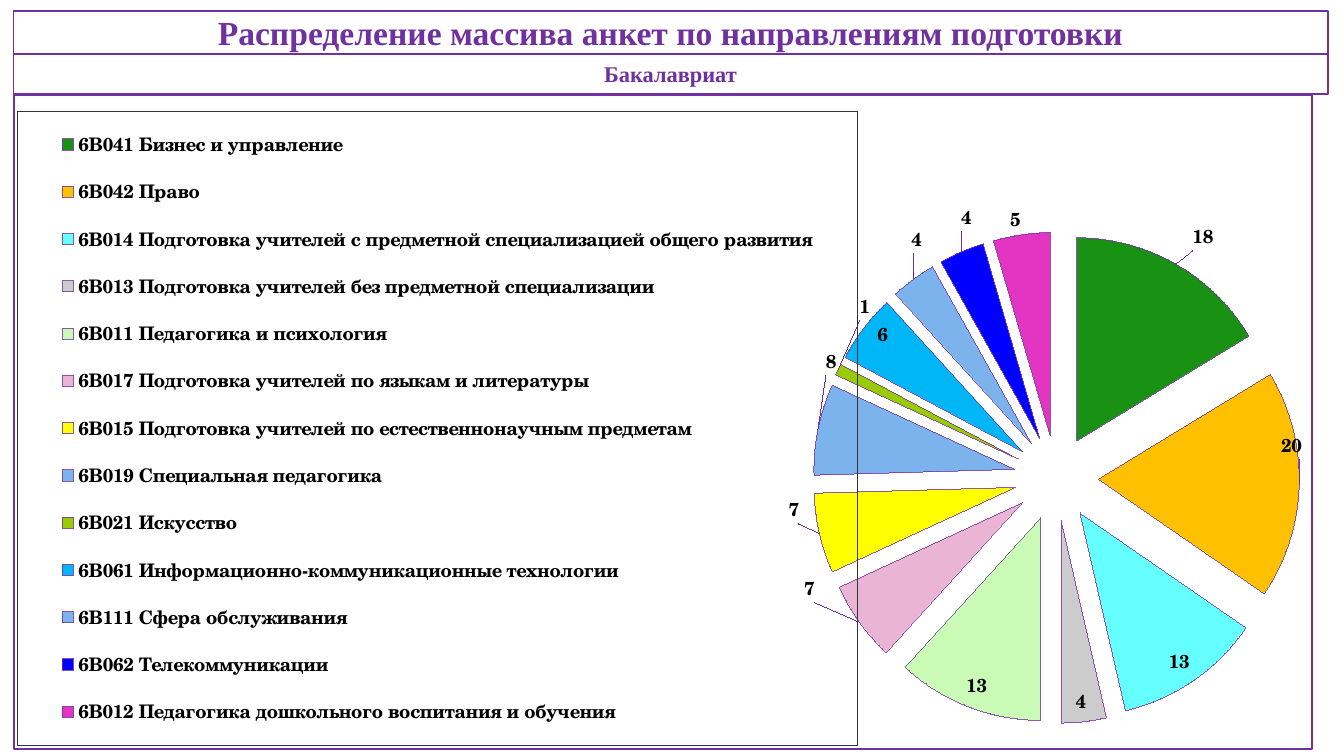
from pptx import Presentation, oxml
from pptx.chart import data as cd
from pptx.dml import color
from pptx.enum import chart as ce, text
from pptx.oxml import ns
from pptx.util import Inches, Pt

HUES = {"main": "7030A0", "back": "FFFFFF", "ink": "000000", "frame": "333333"}
HEAD, BODY = "Times New Roman", "TeX Gyre Schola"

# name, count, slice colour, shift of the label from its default place
ROWS = [
    ("6B041 Бизнес и управление", 18, "199113", (0.01, -0.01)),
    ("6B042 Право", 20, "FFC000", (-0.02, -0.06)),
    ("6В014 Подготовка учителей с предметной специализацией общего развития",
     13, "66FFFF", None),
    ("6В013 Подготовка учителей без предметной специализации",
     4, "CCCCCC", None),
    ("6В011 Педагогика и психология", 13, "C9FBB7", None),
    ("6В017 Подготовка учителей по языкам и литературы",
     7, "EAB4D4", (-0.03, -0.08)),
    ("6В015 Подготовка учителей по естественнонаучным предметам",
     7, "FFFF00", (-0.01, -0.06)),
    ("6B019 Cпециальная педагогика", 8, "7DB3EC", (0.02, -0.08)),
    ("6В021 Искусство", 1, "99CC00", (0.03, -0.07)),
    ("6B061 Информационно-коммуникационные технологии", 6, "00B6F6", None),
    ("6B111 Сфера обслуживания", 4, "7DB3EC", (0.01, -0.03)),
    ("6B062 Телекоммуникации", 4, "0000FF", (0.01, -0.02)),
    ("6В012 Педагогика дошкольного воспитания и обучения",
     5, "E335C2", (0, 0.01)),
]


def rgb(hue):
    return color.RGBColor.from_string(HUES.get(hue, hue))


def node(tag, inner="", val=None):
    attr = "" if val is None else f' val="{val}"'
    return oxml.parse_xml(
        f'<c:{tag} {ns.nsdecls("c", "a")}{attr}>{inner}</c:{tag}>')


def frame(hue, width, fill=None):
    """Chart part properties: optional fill and an outline."""
    def paint(name):
        return f'<a:solidFill><a:srgbClr val="{HUES[name]}"/></a:solidFill>'
    body = paint(fill) if fill else "<a:noFill/>"
    return node("spPr", f'{body}<a:ln w="{Pt(width)}">{paint(hue)}</a:ln>')


def place(part, index, **vals):
    """Give a chart part a manual layout."""
    for old in part.findall(ns.qn("c:layout")):
        part.remove(old)
    inner = "".join(f'<c:{k} val="{v}"/>' for k, v in vals.items())
    part.insert(index, node("layout", f"<c:manualLayout>{inner}</c:manualLayout>"))


class Deck:
    def __init__(self, wide, high):
        self.prs = Presentation()
        self.prs.slide_width, self.prs.slide_height = Inches(wide), Inches(high)
        self.slide = self.prs.slides.add_slide(self.prs.slide_layouts[0])

    def font(self, font, size, name, hue):
        style = {"size": Pt(size), "name": name, "bold": True}
        for key, val in style.items():
            setattr(font, key, val)
        font.color.rgb = rgb(hue)

    def line(self, line, width):
        line.color.rgb, line.width = rgb("main"), Pt(width)

    def band(self, index, words, box, size):
        shape = self.slide.placeholders[index]
        for key, val in zip(("left", "top", "width", "height"), box):
            setattr(shape, key, Inches(val))
        shape.fill.solid()
        shape.fill.fore_color.rgb = rgb("back")
        self.line(shape.line, 1)
        frm = shape.text_frame
        style = {"text": words, "word_wrap": True,
                 "auto_size": text.MSO_AUTO_SIZE.NONE,
                 "vertical_anchor": text.MSO_ANCHOR.MIDDLE}
        for side in ("left", "right", "top", "bottom"):
            style[f"margin_{side}"] = Inches(0.1)
        for key, val in style.items():
            setattr(frm, key, val)
        para = frm.paragraphs[0]
        para.alignment, para.space_before = text.PP_ALIGN.CENTER, Pt(0)
        self.font(para.runs[0].font, size, HEAD, "main")

    def pie(self, rows, box):
        data = cd.CategoryChartData()
        data.categories = [row[0] for row in rows]
        data.add_series("Series 1", [row[1] for row in rows])
        chart = self.slide.shapes.add_chart(
            ce.XL_CHART_TYPE.PIE, *map(Inches, box), data).chart
        chart.has_title = False
        self.font(chart.font, 10, BODY, "ink")
        root = chart._chartSpace
        root.find(ns.qn("c:txPr")).addprevious(frame("main", 1, "back"))
        place(root.chart.plotArea, 0, layoutTarget="inner", xMode="edge",
              yMode="edge", x=0.614, y=0.21, w=0.378, h=0.751)
        self.key(chart)
        chart.plots[0].vary_by_categories = True
        self.wedges(chart.plots[0].series[0], rows)

    def key(self, chart):
        chart.has_legend = True
        key = chart.legend
        key.position = ce.XL_LEGEND_POSITION.RIGHT
        key.include_in_layout = True
        self.font(key.font, 10, BODY, "ink")
        part = key._element
        place(part, 1, xMode="edge", yMode="edge",
              x=0.002, y=0.025, w=0.648, h=0.97)
        part.find(ns.qn("c:overlay")).addnext(frame("frame", 0.25))

    def wedges(self, series, rows):
        self.line(series.format.line, 0.75)
        part = series._element
        part.find(ns.qn("c:spPr")).addnext(node("explosion", val=21))
        labels = series.data_labels
        labels.show_value = True
        labels.position = ce.XL_LABEL_POSITION.BEST_FIT
        self.font(labels.font, 10, BODY, "ink")
        for num, (_, _, hue, shift) in enumerate(rows):
            look = series.points[num].format
            look.fill.solid()
            look.fill.fore_color.rgb = rgb(hue)
            look.line.color.rgb = rgb("main")
            if shift:
                label = series.points[num].data_label
                self.font(label.font, 10, BODY, "ink")
                label.position = ce.XL_LABEL_POSITION.BEST_FIT
                spot = part.xpath(f"c:dLbls/c:dLbl[c:idx/@val='{num}']")[0]
                place(spot, 1, x=shift[0], y=shift[1])
        for tint in part.xpath(".//c:spPr/a:ln/a:solidFill/a:srgbClr"):
            tint.append(oxml.parse_xml(
                f'<a:alpha {ns.nsdecls("a")} val="79000"/>'))


def main():
    wide = 10
    deck = Deck(wide, wide * 9 / 16)
    left, span = 0.1, 9.78
    deck.band(0, "Распределение массива анкет по направлениям подготовки",
              (left, 0.08, span, 0.32), 18)
    deck.band(1, "Бакалавриат", (left, 0.4, span, 0.3), 12)
    deck.pie(ROWS, (left, 0.7, span, 4.88))
    deck.prs.save("out.pptx")


if __name__ == "__main__":
    main()
